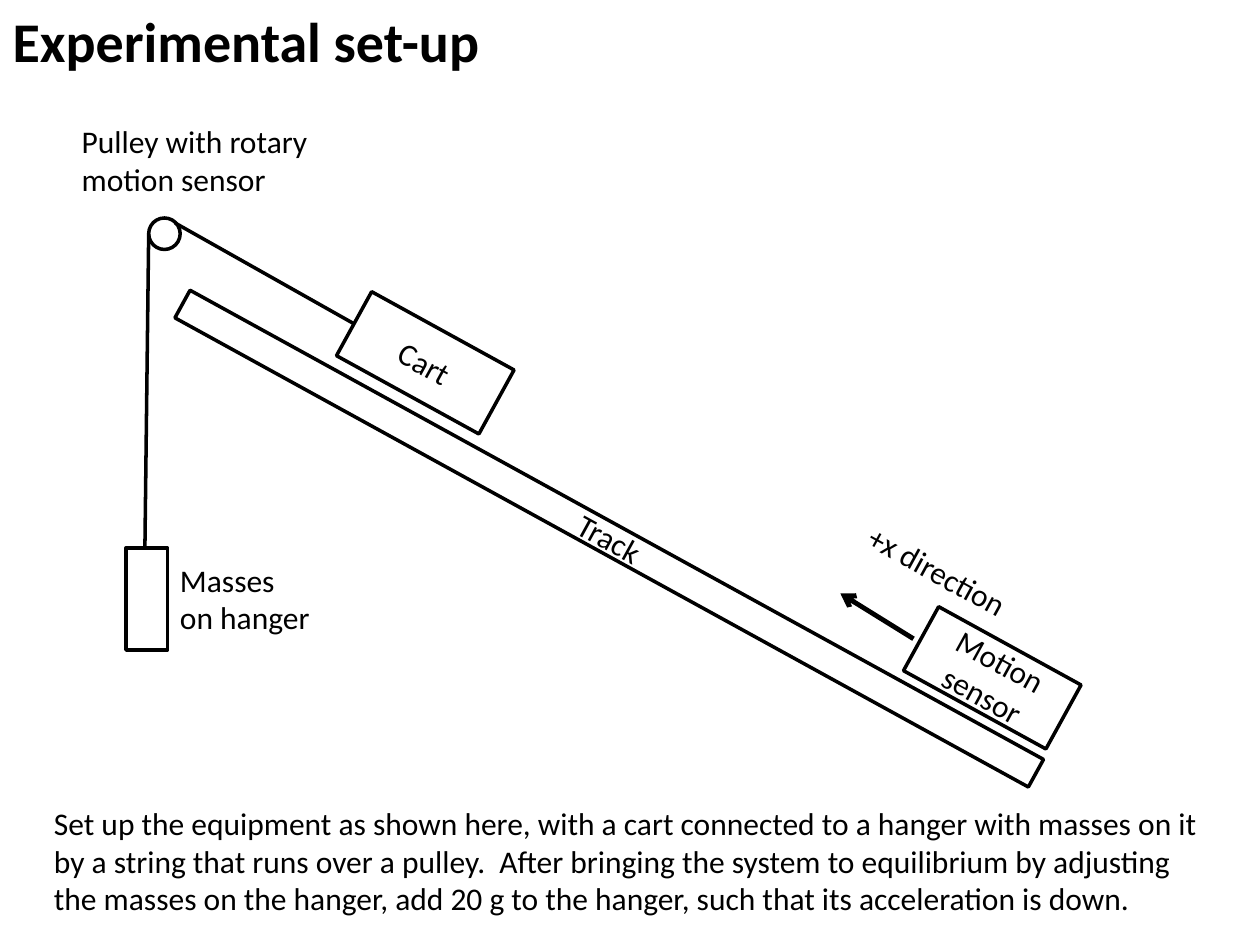
from lxml import etree
from pptx import Presentation
from pptx.dml.color import RGBColor
from pptx.enum.shapes import MSO_CONNECTOR, MSO_SHAPE
from pptx.enum.text import MSO_ANCHOR, MSO_AUTO_SIZE, PP_ALIGN
from pptx.oxml.ns import qn
from pptx.util import Inches, Pt

RECT, OVAL = MSO_SHAPE.RECTANGLE, MSO_SHAPE.OVAL
LINE = MSO_CONNECTOR.STRAIGHT
LEFT, MID = PP_ALIGN.LEFT, PP_ALIGN.CENTER
TOP = MSO_ANCHOR.TOP
GROW = MSO_AUTO_SIZE.SHAPE_TO_FIT_TEXT
FONT, INK = "Calibri", "000000"
TILT = 28.8  # slope of the track in degrees
TOP_SIDE, LEFT_SIDE = 0, 1


def color(code):
    return RGBColor.from_string(code)


def place(item, box, turn=0):
    item.left, item.top, item.width, item.height = map(Inches, box)
    item.rotation = turn


def write(item, text, size=18, bold=False, align=LEFT):
    frame = item.text_frame
    frame.word_wrap = True
    frame.auto_size = GROW
    frame.vertical_anchor = TOP
    frame.text = text
    for para in frame.paragraphs:
        para.alignment = align
        para.line_spacing = 1.0
        font = para.font
        font.name, font.size, font.bold = FONT, Pt(size), bold
        font.color.rgb = color(INK)


def label(slide, text, box, turn=0, **style):
    item = slide.shapes.add_textbox(*map(Inches, box))
    item.rotation = turn
    write(item, text, **style)


def outline(slide, kind, box, turn=0):
    item = slide.shapes.add_shape(kind, *map(Inches, box))
    item.rotation = turn
    item.shadow.inherit = False
    item.fill.background()
    item.line.color.rgb = color(INK)
    item.line.width = Pt(2)
    return item


def link(slide, start, end, width=2, arrow=False, join=None):
    item = slide.shapes.add_connector(LINE, *map(Inches, start + end))
    if join:
        item.begin_connect(*join)
        # A tilted side has its middle at the given start
        item.begin_x, item.begin_y = map(Inches, start)
    item.line.color.rgb = color(INK)
    item.line.width = Pt(width)
    props = item._element.spPr
    if arrow:
        etree.SubElement(props.find(qn("a:ln")), qn("a:tailEnd"), type="arrow")
    etree.SubElement(props, qn("a:effectLst"))


def main():
    deck = Presentation()
    deck.slide_width, deck.slide_height = Inches(10), Inches(7.5)
    slide = deck.slides.add_slide(deck.slide_layouts[5])

    # Title and instructions
    title = slide.shapes.title
    place(title, (0, 0, 7.92, 0.64))
    write(title, "Experimental set-up", size=32, bold=True)
    label(slide, "Set up the equipment as shown here, with a cart connected to "
          "a hanger with masses on it by a string that runs over a pulley.  "
          "After bringing the system to equilibrium by adjusting the masses "
          "on the hanger, add 20 g to the hanger, such that its acceleration "
          "is down.", (0.33, 6.33, 9.33, 1.01))

    # Tilted parts: outline, then its text
    parts = [
        ("Cart", (2.73, 2.59, 1.29, 0.58), (2.85, 2.68, 1.04, 0.4)),
        ("Track", (0.97, 4.15, 7.73, 0.25), (4.21, 4.07, 1.25, 0.41)),
        ("Motion\nsensor", (7.23, 5.09, 1.29, 0.58), (7.35, 5.03, 1.04, 0.7)),
    ]
    made = {}
    for text, box, area in parts:
        made[text] = outline(slide, RECT, box, TILT)
        label(slide, text, area, TILT, align=MID)

    # Direction arrow
    link(slide, (7.25, 5.07), (6.67, 4.71), width=2.75, arrow=True)
    label(slide, "+x direction", (6.34, 4.33, 2.2, 0.4), TILT, align=MID)

    # Hanger, pulley and string
    label(slide, "Masses on hanger", (1.33, 4.4, 1.25, 0.71))
    outline(slide, OVAL, (1.18, 1.73, 0.25, 0.25))
    masses = outline(slide, RECT, (1, 4.35, 0.33, 0.81))
    link(slide, (1.15, 4.35), (1.18, 1.86), join=(masses, TOP_SIDE))
    link(slide, (2.81, 2.57), (1.39, 1.77), join=(made["Cart"], LEFT_SIDE))
    label(slide, "Pulley with rotary motion sensor", (0.55, 0.92, 2.11, 0.71))

    deck.save("out.pptx")


if __name__ == "__main__":
    main()
